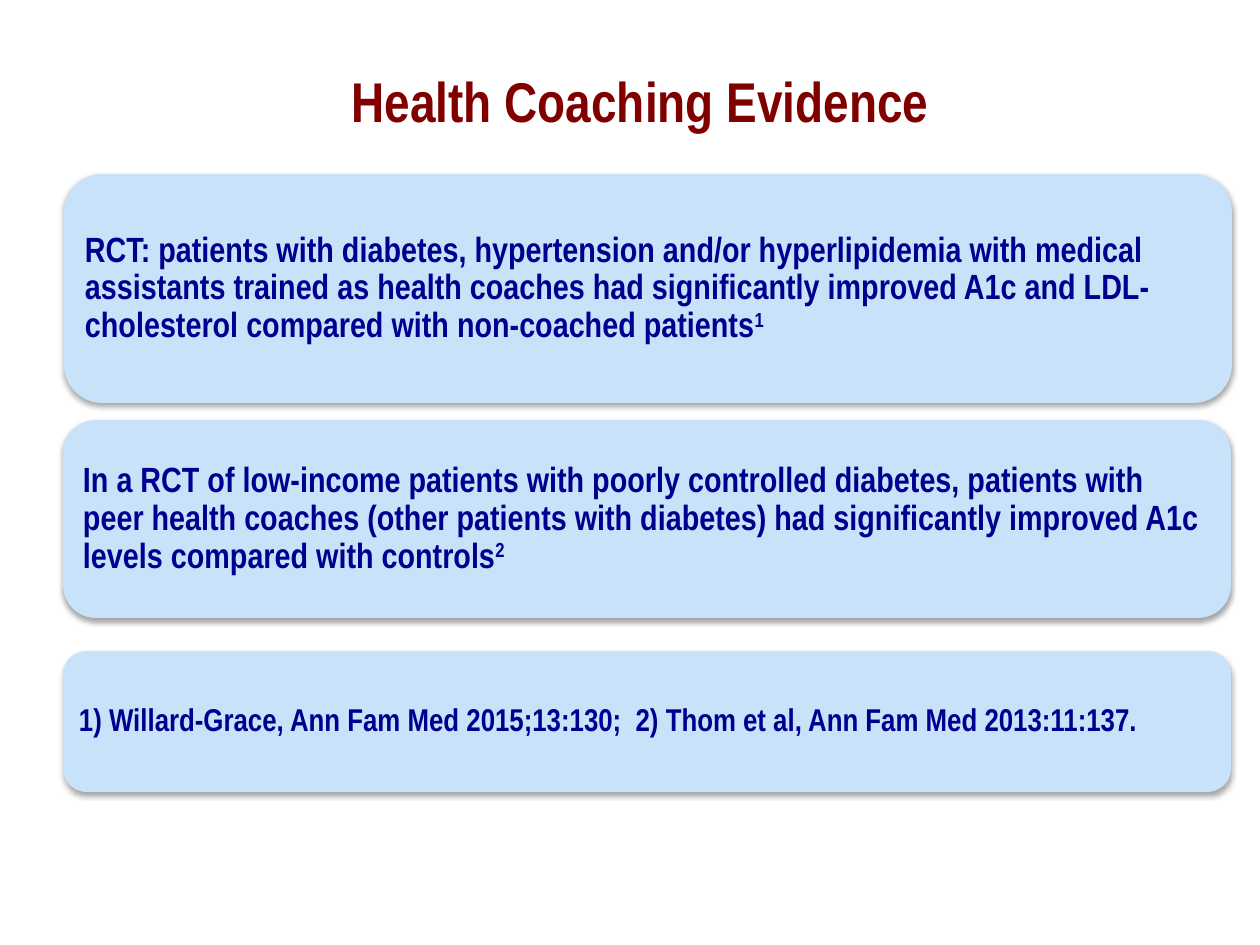
from lxml import etree
from pptx import Presentation
from pptx.dml.color import RGBColor
from pptx.enum import shapes, text
from pptx.oxml import ns
from pptx.util import Pt

PX = 914400 / 126
FONT = "Arial Narrow"
COLORS = {"title": "800000", "card": "C8E2FA", "body": "000090", "shadow": "000000"}


def px(*lengths):
    return [round(n * PX) for n in lengths]


def add_text(s, box, runs, size, color, align, inset, spacing):
    tf = s.shapes.add_textbox(*px(*box)).text_frame
    tf.word_wrap = True
    tf.vertical_anchor = text.MSO_ANCHOR.MIDDLE
    tf.margin_left, tf.margin_right, tf.margin_top, tf.margin_bottom = px(inset, inset, 5, 5)
    p = tf.paragraphs[0]
    p.alignment = align
    p.line_spacing = spacing
    for words, baseline in runs:
        r = p.add_run()
        r.text = words
        r.font.name = FONT
        r.font.size = Pt(size)
        r.font.bold = True
        r.font.color.rgb = RGBColor.from_string(COLORS[color])
        if baseline:
            r.font._element.set("baseline", str(baseline))


prs = Presentation()
prs.slide_width, prs.slide_height = px(1260, 945)
s = prs.slides.add_slide(prs.slide_layouts[6])

add_text(s, (105, 21, 1071, 158), [("Health Coaching Evidence", 0)], 32, "title",
         text.PP_ALIGN.CENTER, 13, 1.0)

cards = [
    ((64, 174, 1168, 229), 11, 10, 20, [
        ("RCT: patients with diabetes, hypertension and/or hyperlipidemia with medical "
         "assistants trained as health coaches had significantly improved A1c and "
         "LDL-cholesterol compared with non-coached patients", 0),
        ("1", 30000)]),
    ((63, 420, 1168, 198), 10, 10, 20, [
        ("In a RCT of low-income patients with poorly controlled diabetes, patients with "
         "peer health coaches (other patients with diabetes) had significantly improved "
         "A1c levels compared with controls", 0),
        ("2", 30000)]),
    ((63, 651, 1168, 141), 7, 9, 18, [
        ("1) Willard-Grace, Ann Fam Med 2015;13:130;  "
         "2) Thom et al, Ann Fam Med 2013:11:137.", 0)]),
]

for (x, y, w, h), pad, inset, size, runs in cards:
    sp = s.shapes.add_shape(shapes.MSO_SHAPE.ROUNDED_RECTANGLE, *px(x, y, w, h))
    sp.fill.solid()
    sp.fill.fore_color.rgb = RGBColor.from_string(COLORS["card"])
    sp.line.fill.background()
    sp.shadow.inherit = False
    effects = sp._element.spPr.find(ns.qn("a:effectLst"))
    shadow = etree.SubElement(effects, ns.qn("a:outerShdw"), blurRad=str(Pt(3.1)),
                              dist=str(Pt(1.8)), dir="5400000", rotWithShape="0")
    tint = etree.SubElement(shadow, ns.qn("a:srgbClr"), val=COLORS["shadow"])
    etree.SubElement(tint, ns.qn("a:alpha"), val="35000")
    add_text(s, (x + pad, y + pad, w - 2 * pad, h - 2 * pad), runs, size, "body",
             text.PP_ALIGN.LEFT, inset, 0.9)

prs.save("out.pptx")
